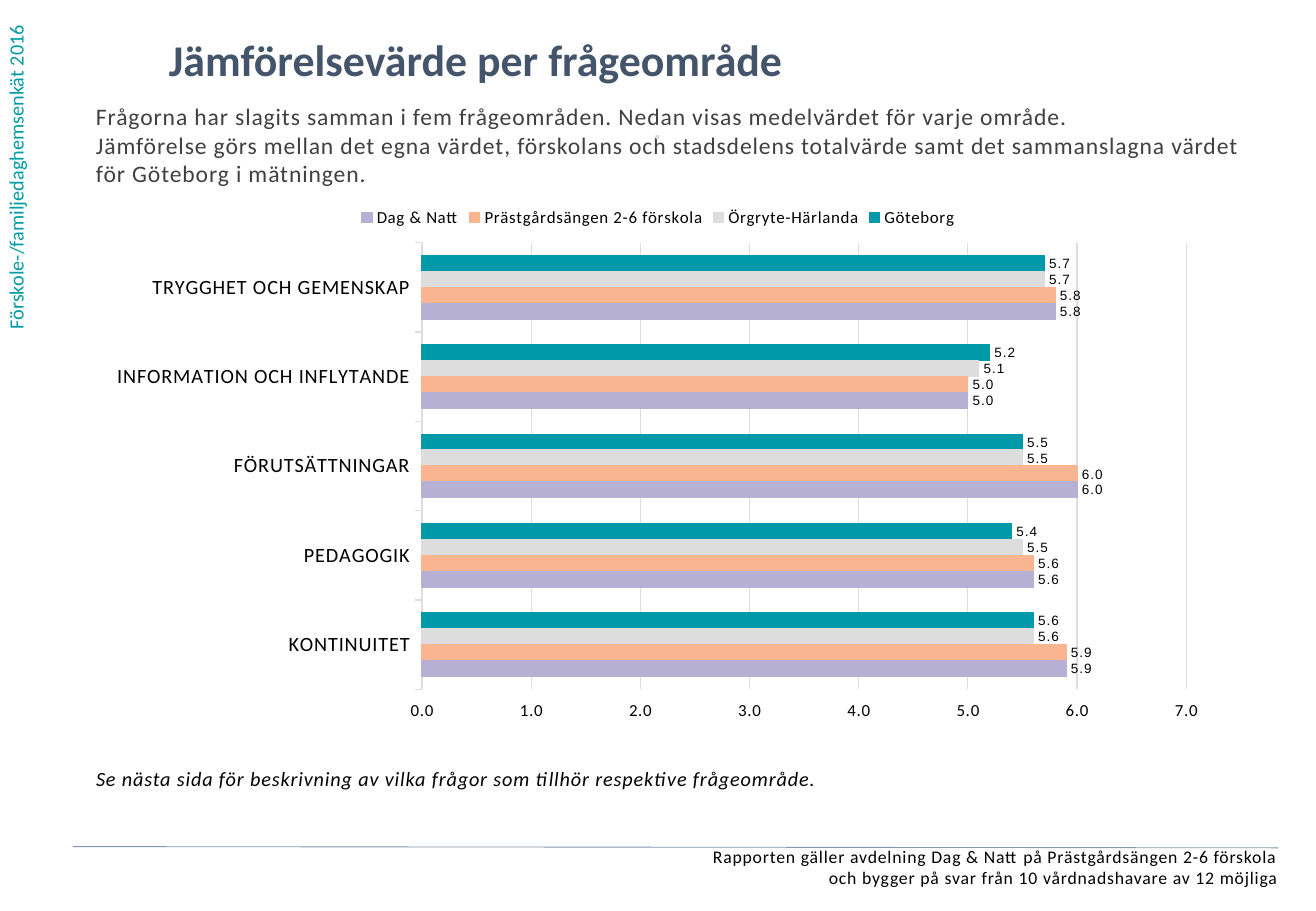
"""Build a slide comparing mean scores per question area in a preschool survey."""
import pptx
import pptx.chart.data
import pptx.dml.color
import pptx.enum.chart
import pptx.enum.shapes
import pptx.enum.text
import pptx.oxml
import pptx.oxml.ns
import pptx.util
from dataclasses import dataclass
from lxml import etree

Inches = pptx.util.Inches
Pt = pptx.util.Pt
qn = pptx.oxml.ns.qn
ALIGN = pptx.enum.text.PP_ALIGN


@dataclass
class Theme:
    font: str = "Calibri"
    label_font: str = "Arial"
    teal: str = "009BA4"
    title: str = "44546A"
    body: str = "404040"
    black: str = "000000"
    dot: str = "D2D9E2"
    rule: str = "8497B0"
    grid: str = "DDDDDD"
    city: str = "0099AA"
    district: str = "DDDDDD"
    preschool: str = "F9B590"
    unit: str = "B6B1D4"
    title_size: float = 26
    body_size: float = 14
    note_size: float = 12
    footer_size: float = 10.5
    axis_size: float = 10
    label_size: float = 8
    spacing: str = "50"


theme = Theme()


def color(value):
    return pptx.dml.color.RGBColor.from_string(value)


def add_text(area, lines, size, ink, align=ALIGN.LEFT, bold=False, italic=False, spaced=True, inset=0):
    box = slide.shapes.add_textbox(*[Inches(length) for length in area])
    frame = box.text_frame
    frame.word_wrap = True
    frame.margin_left = frame.margin_right = frame.margin_bottom = 0
    frame.margin_top = Inches(inset)
    para = frame.paragraphs[0]
    para.alignment = align
    for index, line in enumerate(lines):
        if index:
            para.add_line_break()
        span = para.add_run()
        span.text = line
        span.font.name = theme.font
        span.font.size = Pt(size)
        span.font.bold = bold
        span.font.italic = italic
        span.font.color.rgb = color(ink)
    if spaced:
        for properties in box.element.iter(qn("a:rPr")):
            properties.set("spc", theme.spacing)
    return box


deck = pptx.Presentation()
deck.slide_width = Inches(10.83)
deck.slide_height = Inches(7.5)
slide = deck.slides.add_slide(deck.slide_layouts[6])

survey = add_text((-0.02, 0, 0.4, 2.81), ["Förskole-/familjedaghemsenkät 2016"],
                  theme.note_size, theme.teal, spaced=False, inset=0.05)
survey.text_frame.margin_left = survey.text_frame.margin_right = Inches(0.1)
survey.text_frame.margin_bottom = Inches(0.05)
survey.element.find(".//" + qn("a:bodyPr")).set("vert", "vert270")

add_text((1.39, 0.27, 8.34, 0.57), ["Jämförelsevärde per frågeområde"],
         theme.title_size, theme.title, bold=True, spaced=False)
add_text((0.79, 0.84, 9.46, 1.01), [
    "Frågorna har slagits samman i fem frågeområden. Nedan visas medelvärdet för varje område.",
    "Jämförelse görs mellan det egna värdet, förskolans och stadsdelens totalvärde samt det "
    "sammanslagna värdet för Göteborg i mätningen.",
], theme.body_size, theme.body)
add_text((0.12, 6.96, 10.4, 0.43), [
    "Rapporten gäller avdelning Dag & Natt på Prästgårdsängen 2-6 förskola",
    "och bygger på svar från 10 vårdnadshavare av 12 möjliga",
], theme.footer_size, theme.black, align=ALIGN.RIGHT)
add_text((3.87, 1.02, 3.08, 0.39), ["⋅"], theme.note_size, theme.dot, align=ALIGN.CENTER, bold=True)
add_text((0.79, 6.03, 9.25, 0.98),
         ["Se nästa sida för beskrivning av vilka frågor som tillhör respektive frågeområde."],
         theme.note_size, theme.black, italic=True, inset=0.35)

scores = [
    ("Göteborg", theme.city, (5.7, 5.2, 5.5, 5.4, 5.6)),
    ("Örgryte-Härlanda", theme.district, (5.7, 5.1, 5.5, 5.5, 5.6)),
    ("Prästgårdsängen 2-6 förskola", theme.preschool, (5.8, 5.0, 6.0, 5.6, 5.9)),
    ("Dag & Natt", theme.unit, (5.8, 5.0, 6.0, 5.6, 5.9)),
]
data = pptx.chart.data.CategoryChartData(number_format="0.0")
data.categories = ["TRYGGHET OCH GEMENSKAP", "INFORMATION OCH INFLYTANDE",
                   "FÖRUTSÄTTNINGAR", "PEDAGOGIK", "KONTINUITET"]
for name, fill, values in scores:
    data.add_series(name, values)

chart = slide.shapes.add_chart(
    pptx.enum.chart.XL_CHART_TYPE.BAR_CLUSTERED,
    Inches(0.79), Inches(1.6), Inches(9.25), Inches(4.43), data).chart
chart.has_title = False
chart.font.name = theme.font
chart.font.size = Pt(theme.axis_size)
chart.font.color.rgb = color(theme.black)
chart.has_legend = True
chart.legend.position = pptx.enum.chart.XL_LEGEND_POSITION.TOP
chart.legend.include_in_layout = False
chart.legend.font.size = Pt(theme.axis_size)

areas = chart.category_axis
areas.reverse_order = True
areas.major_tick_mark = pptx.enum.chart.XL_TICK_MARK.OUTSIDE
areas.tick_labels.font.size = Pt(theme.note_size)
areas.format.line.color.rgb = color(theme.grid)
areas.format.line.width = Pt(0.75)

scale = chart.value_axis
scale.minimum_scale, scale.maximum_scale, scale.major_unit = 0, 7, 1
scale.major_tick_mark = pptx.enum.chart.XL_TICK_MARK.OUTSIDE
scale.tick_label_position = pptx.enum.chart.XL_TICK_LABEL_POSITION.HIGH
scale.format.line.fill.background()
scale.major_gridlines.format.line.color.rgb = color(theme.grid)
scale.major_gridlines.format.line.width = Pt(0.75)
scale.tick_labels.number_format = "0.0;0.0"
scale.tick_labels.number_format_is_linked = False
scale.tick_labels.font.size = Pt(theme.axis_size)

plot = chart.plots[0]
plot.gap_width = 162
plot.overlap = 0
plot.vary_by_categories = False
for series, (name, fill, values) in zip(plot.series, scores):
    series.format.fill.solid()
    series.format.fill.fore_color.rgb = color(fill)
    series.format.line.color.rgb = color(fill)
    series.format.line.width = Pt(0.75)
    labels = series.data_labels
    labels.show_value = True
    labels.number_format = "0.0;0.0"
    labels.number_format_is_linked = False
    labels.position = pptx.enum.chart.XL_LABEL_POSITION.OUTSIDE_END
    labels.font.name = theme.label_font
    labels.font.size = Pt(theme.label_size)

for properties in chart.element.iter(qn("a:defRPr")):
    properties.set("spc", theme.spacing)

plot_area = chart.element.find(".//" + qn("c:plotArea"))
for old_layout in plot_area.findall(qn("c:layout")):
    plot_area.remove(old_layout)
layout = etree.Element(qn("c:layout"))
manual = etree.SubElement(layout, qn("c:manualLayout"))
for tag, value in (("layoutTarget", "inner"), ("xMode", "edge"), ("yMode", "edge"),
                   ("x", "0.29"), ("y", "0.09"), ("w", "0.68"), ("h", "0.83")):
    etree.SubElement(manual, qn("c:" + tag)).set("val", value)
plot_area.insert(0, layout)

rule = slide.shapes.add_connector(
    pptx.enum.shapes.MSO_CONNECTOR.STRAIGHT,
    Inches(0.6), Inches(6.97), Inches(10.52), Inches(6.98))
rule.line.color.rgb = color(theme.rule)
rule.line.width = Pt(0.5)
etree.SubElement(rule.element.spPr, qn("a:effectLst"))

deck.save("out.pptx")
